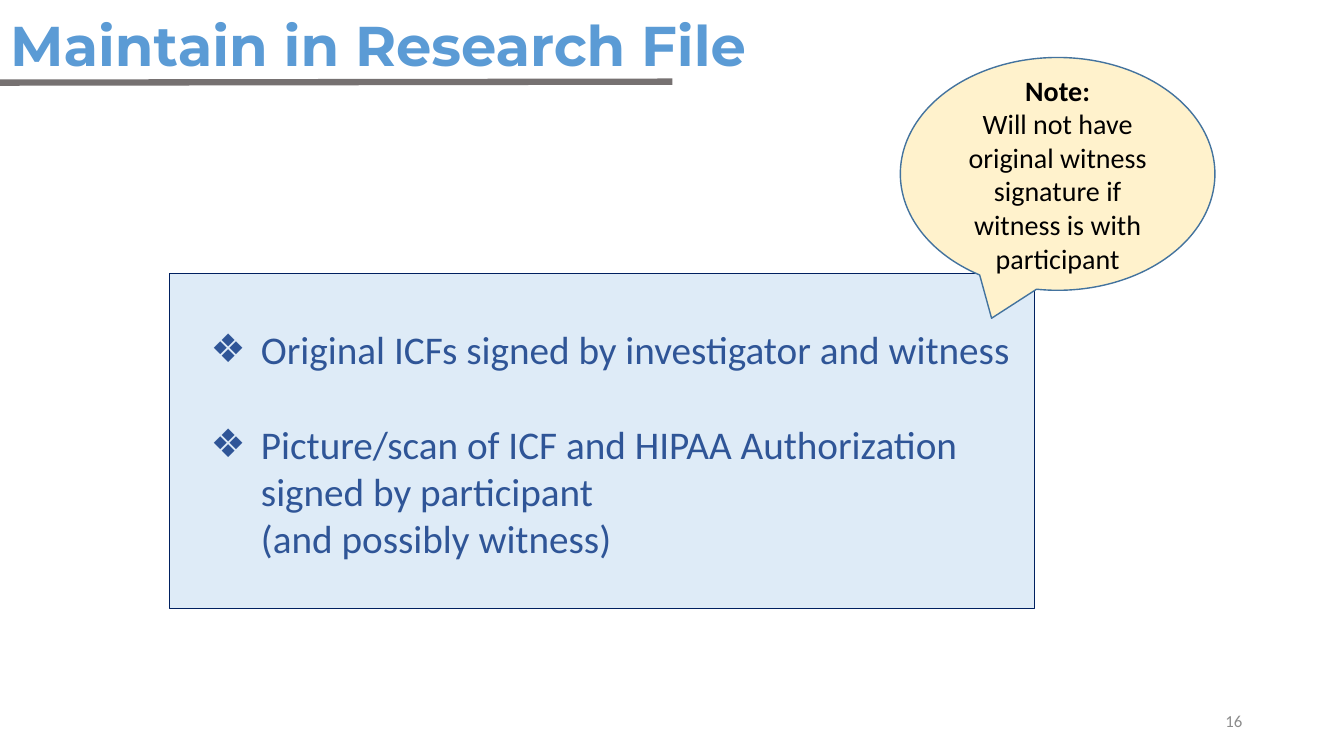
from dataclasses import dataclass

from lxml.etree import SubElement
from pptx import Presentation
from pptx.dml.color import RGBColor
from pptx.enum.shapes import MSO_CONNECTOR, MSO_SHAPE
from pptx.enum.text import MSO_ANCHOR, PP_ALIGN
from pptx.oxml.ns import qn
from pptx.util import Inches, Pt


@dataclass(frozen=True)
class Frame:
    left: float
    top: float
    width: float
    height: float

    def lengths(self) -> tuple:
        return tuple(Inches(v) for v in (self.left, self.top, self.width, self.height))


@dataclass(frozen=True)
class Style:
    size: float
    color: str
    font: str = "Calibri"
    bold: bool = False
    align: PP_ALIGN = PP_ALIGN.LEFT


@dataclass(frozen=True)
class Panel:
    kind: MSO_SHAPE
    frame: Frame
    fill: str
    line: str
    line_width: float


@dataclass(frozen=True)
class Item:
    text: str
    bullet: str = ""
    space_before: float = 0


TITLE = Style(40, "5B9BD5", "Montserrat", True)
BODY = Style(28, "2F5597")
NOTE_HEAD = Style(20, "000000", bold=True, align=PP_ALIGN.CENTER)
NOTE_BODY = Style(20, "000000", align=PP_ALIGN.CENTER)
PAGE_NUMBER = Style(12, "8C8C8C", align=PP_ALIGN.RIGHT)

FILE_PANEL = Panel(MSO_SHAPE.RECTANGLE, Frame(1.68, 2.71, 8.58, 3.33), "DEEBF7", "002060", 0.75)
NOTE_PANEL = Panel(MSO_SHAPE.OVAL_CALLOUT, Frame(8.93, 0.57, 3.12, 2.31), "FFF2CC", "43739E", 1)

ITEMS = [
    Item("Original ICFs signed by investigator and witness", "❖"),
    Item("Picture/scan of ICF and HIPAA Authorization signed by participant", "❖", 34),
    Item("(and possibly witness)"),
]
NOTE = [
    ("Note:", NOTE_HEAD),
    ("Will not have original witness signature if witness is with participant", NOTE_BODY),
]


def rgb(color: str) -> RGBColor:
    return RGBColor.from_string(color)


def write(para, text: str, style: Style) -> None:
    para.text = text
    para.alignment = style.align
    for span in para.runs:
        span.font.name = style.font
        span.font.size = Pt(style.size)
        span.font.bold = style.bold
        span.font.color.rgb = rgb(style.color)


def next_para(text_frame, index: int):
    return text_frame.add_paragraph() if index else text_frame.paragraphs[0]


def add_panel(page, panel: Panel, anchor: MSO_ANCHOR):
    shape = page.shapes.add_shape(panel.kind, *panel.frame.lengths())
    shape.shadow.inherit = False
    shape.fill.solid()
    shape.fill.fore_color.rgb = rgb(panel.fill)
    shape.line.color.rgb = rgb(panel.line)
    shape.line.width = Pt(panel.line_width)
    shape.text_frame.word_wrap = True
    shape.text_frame.vertical_anchor = anchor
    return shape


def add_title(page, text: str) -> None:
    title = page.shapes.title
    title.left, title.top, title.width, title.height = Frame(0, 0.05, 13.33, 0.77).lengths()
    title.text_frame.vertical_anchor = MSO_ANCHOR.TOP
    write(title.text_frame.paragraphs[0], text, TITLE)
    title.text_frame.paragraphs[0].line_spacing = 1.0
    title.text_frame.paragraphs[0].space_before = Pt(0)


def add_title_rule(page) -> None:
    rule = page.shapes.add_connector(
        MSO_CONNECTOR.STRAIGHT, Inches(0), Inches(0.82), Inches(6.67), Inches(0.81)
    )
    rule.line.color.rgb = rgb("767171")
    rule.line.width = Pt(4.5)
    SubElement(rule._element.spPr, qn("a:effectLst"))


def add_file_list(page) -> None:
    text_frame = add_panel(page, FILE_PANEL, MSO_ANCHOR.TOP).text_frame
    text_frame.margin_top = Inches(0.52)
    for index, item in enumerate(ITEMS):
        para = next_para(text_frame, index)
        write(para, item.text, BODY)
        para.space_before = Pt(item.space_before)
        properties = para._p.get_or_add_pPr()
        properties.set("marL", str(Inches(0.81)))
        properties.set("indent", str(Inches(-0.5 if item.bullet else 0)))
        if item.bullet:
            SubElement(properties, qn("a:buFont"), typeface="Arial")
            SubElement(properties, qn("a:buChar"), char=item.bullet)


def add_note(page) -> None:
    callout = add_panel(page, NOTE_PANEL, MSO_ANCHOR.MIDDLE)
    callout.adjustments[0] = -0.21
    callout.adjustments[1] = 0.62
    for index, (text, style) in enumerate(NOTE):
        write(next_para(callout.text_frame, index), text, style)


def add_page_number(page, number: int) -> None:
    box = page.shapes.add_textbox(*Frame(9.42, 6.95, 3, 0.4).lengths())
    box.text_frame.word_wrap = True
    box.text_frame.vertical_anchor = MSO_ANCHOR.MIDDLE
    write(box.text_frame.paragraphs[0], str(number), PAGE_NUMBER)


def main() -> None:
    deck = Presentation()
    deck.slide_width, deck.slide_height = Inches(13.33), Inches(7.5)
    page = deck.slides.add_slide(deck.slide_layouts[5])
    add_title(page, "Maintain in Research File")
    add_title_rule(page)
    add_file_list(page)
    add_note(page)
    add_page_number(page, 16)
    deck.save("out.pptx")


if __name__ == "__main__":
    main()
